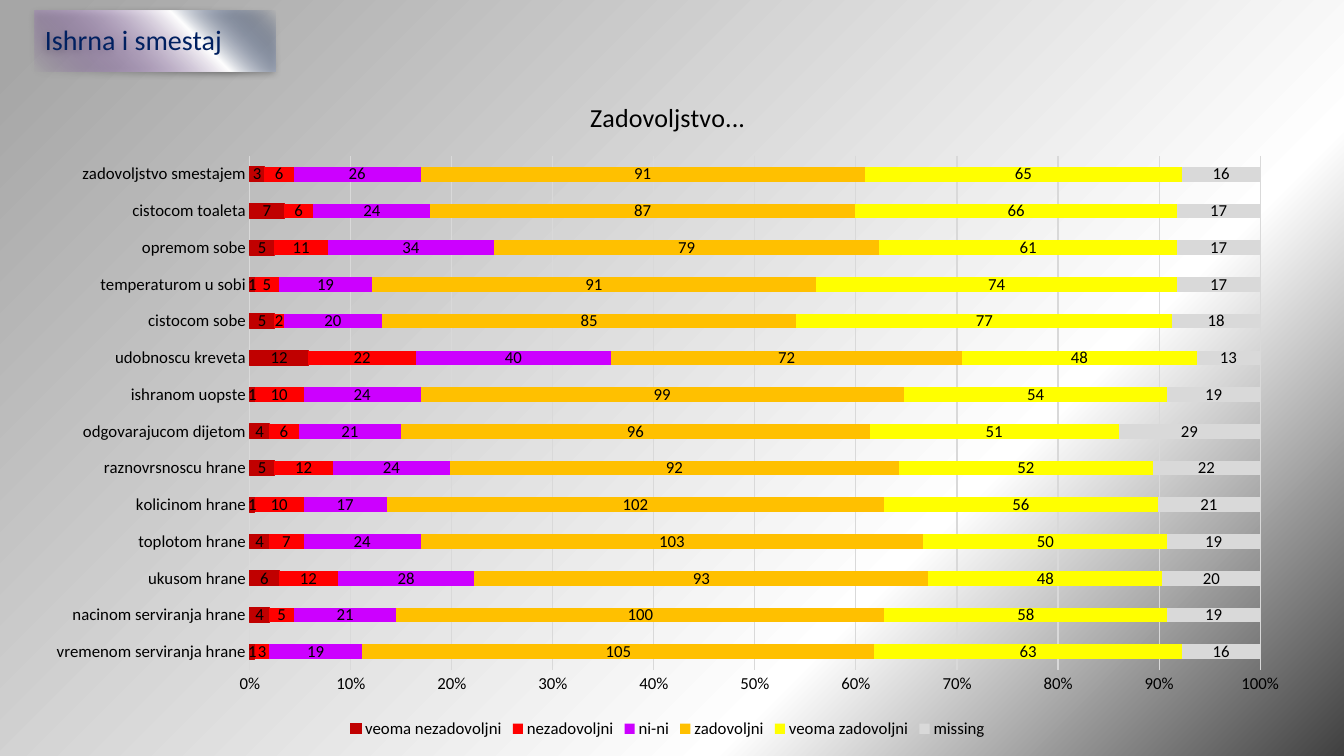
from lxml import etree
from pptx import Presentation
from pptx.chart.data import CategoryChartData
from pptx.dml.color import RGBColor
from pptx.enum import chart as ch, text
from pptx.oxml.ns import qn
from pptx.util import Pt

FONT = "Calibri"
BLACK = RGBColor(0, 0, 0)
WHITE = RGBColor(0xFF, 0xFF, 0xFF)
NAVY = RGBColor(0x00, 0x20, 0x60)
PURPLE = RGBColor(0x70, 0x30, 0xA0)
CHARCOAL = RGBColor(0x40, 0x40, 0x40)
SILVER = RGBColor(0xA6, 0xA6, 0xA6)
PALE = RGBColor(0xD9, 0xD9, 0xD9)
CRIMSON = RGBColor(0xC0, 0x00, 0x00)
RED = RGBColor(0xFF, 0x00, 0x00)
VIOLET = RGBColor(0xCC, 0x00, 0xFF)
AMBER = RGBColor(0xFF, 0xC0, 0x00)
YELLOW = RGBColor(0xFF, 0xFF, 0x00)

CATEGORIES = [
    "vremenom serviranja hrane", "nacinom serviranja hrane", "ukusom hrane",
    "toplotom hrane", "kolicinom hrane", "raznovrsnoscu hrane",
    "odgovarajucom dijetom", "ishranom uopste", "udobnoscu kreveta",
    "cistocom sobe", "temperaturom u sobi", "opremom sobe",
    "cistocom toaleta", "zadovoljstvo smestajem",
]
ANSWERS = [
    ("veoma nezadovoljni", CRIMSON, [1, 4, 6, 4, 1, 5, 4, 1, 12, 5, 1, 5, 7, 3]),
    ("nezadovoljni", RED, [3, 5, 12, 7, 10, 12, 6, 10, 22, 2, 5, 11, 6, 6]),
    ("ni-ni", VIOLET, [19, 21, 28, 24, 17, 24, 21, 24, 40, 20, 19, 34, 24, 26]),
    ("zadovoljni", AMBER, [105, 100, 93, 103, 102, 92, 96, 99, 72, 85, 91, 79, 87, 91]),
    ("veoma zadovoljni", YELLOW, [63, 58, 48, 50, 56, 52, 51, 54, 48, 77, 74, 61, 66, 65]),
    ("missing", PALE, [16, 19, 20, 19, 21, 22, 29, 19, 13, 18, 17, 17, 17, 16]),
]


def set_font(font, size, color=BLACK):
    font.name, font.size, font.bold = FONT, Pt(size), False
    font.color.rgb = color


def radial_gradient(owner, stops, focus):
    grad = next(owner.iter(qn("a:gradFill")))
    for child in list(grad):
        grad.remove(child)
    gs_list = etree.SubElement(grad, qn("a:gsLst"))
    for percent, color, opacity in stops:
        gs = etree.SubElement(gs_list, qn("a:gs"), pos=str(percent * 1000))
        clr = etree.SubElement(gs, qn("a:srgbClr"), val=str(color))
        if opacity < 100:
            etree.SubElement(clr, qn("a:alpha"), val=str(opacity * 1000))
    circle = etree.SubElement(grad, qn("a:path"), path="circle")
    etree.SubElement(circle, qn("a:fillToRect"),
                     {side: "100000" for side in focus})


def add_background(s):
    s.background.fill.gradient()
    stops = [(0, CHARCOAL, 100), (30, WHITE, 100), (97, SILVER, 100)]
    radial_gradient(s.element, stops, "lt")


def add_soft_shadow(sp):
    effects = etree.SubElement(sp.element.spPr, qn("a:effectLst"))
    shadow = etree.SubElement(effects, qn("a:outerShdw"),
                              blurRad=str(Pt(5)), dist=str(Pt(1)), dir="5400000")
    clr = etree.SubElement(shadow, qn("a:srgbClr"), val=str(BLACK))
    etree.SubElement(clr, qn("a:alpha"), val="40000")


def add_heading(s, left, top, width, height):
    sp = s.shapes.add_textbox(Pt(left), Pt(top), Pt(width), Pt(height))
    sp.fill.gradient()
    stops = [(0, NAVY, 0), (35, WHITE, 100), (100, PURPLE, 0)]
    radial_gradient(sp.element, stops, "lb")
    add_soft_shadow(sp)
    tf = sp.text_frame
    tf.word_wrap = True
    tf.vertical_anchor = text.MSO_ANCHOR.MIDDLE
    p = tf.paragraphs[0]
    p.text = "Ishrna i smestaj"
    p.line_spacing = 0.9
    set_font(p.runs[0].font, 20, NAVY)


def style_axes(chart):
    for axis in (chart.category_axis, chart.value_axis):
        axis.major_tick_mark = axis.minor_tick_mark = ch.XL_TICK_MARK.NONE
        set_font(axis.tick_labels.font, 12)
    line = chart.category_axis.format.line
    line.color.rgb, line.width = PALE, Pt(0.75)
    values = chart.value_axis
    values.format.line.fill.background()
    values.tick_labels.number_format = "0%"
    values.tick_labels.number_format_is_linked = False
    values.has_major_gridlines = True
    grid = values.major_gridlines.format.line
    grid.color.rgb, grid.width = PALE, Pt(0.75)


def style_series(series, color):
    series.format.fill.solid()
    series.format.fill.fore_color.rgb = color
    series.invert_if_negative = False
    if color == CRIMSON:
        series.format.line.color.rgb = color
        series.format.line.width = Pt(0.75)
    labels = series.data_labels
    labels.show_value = True
    labels.position = ch.XL_LABEL_POSITION.CENTER
    set_font(labels.font, 12)


def add_satisfaction_chart(s, left, top, width, height):
    data = CategoryChartData()
    data.categories = CATEGORIES
    for name, _, values in ANSWERS:
        data.add_series(name, values)
    chart = s.shapes.add_chart(ch.XL_CHART_TYPE.BAR_STACKED_100, Pt(left), Pt(top),
                               Pt(width), Pt(height), data).chart
    set_font(chart.font, 10)
    chart.has_title = True
    p = chart.chart_title.text_frame.paragraphs[0]
    p.text = "Zadovoljstvo..."
    set_font(p.runs[0].font, 18.6)
    chart.chart_title.include_in_layout = False
    chart.has_legend = True
    chart.legend.position = ch.XL_LEGEND_POSITION.BOTTOM
    chart.legend.include_in_layout = False
    set_font(chart.legend.font, 12)
    style_axes(chart)
    plot = chart.plots[0]
    plot.gap_width, plot.overlap, plot.vary_by_categories = 150, 100, False
    for series, (_, color, _) in zip(plot.series, ANSWERS):
        style_series(series, color)


def main():
    prs = Presentation()
    prs.slide_width, prs.slide_height = Pt(960), Pt(540)
    s = prs.slides.add_slide(prs.slide_layouts[6])
    add_background(s)
    add_heading(s, 25, 7.7, 171.5, 43.5)
    add_satisfaction_chart(s, 22.3, 54, 909.4, 476.6)
    prs.save("out.pptx")


if __name__ == "__main__":
    main()
